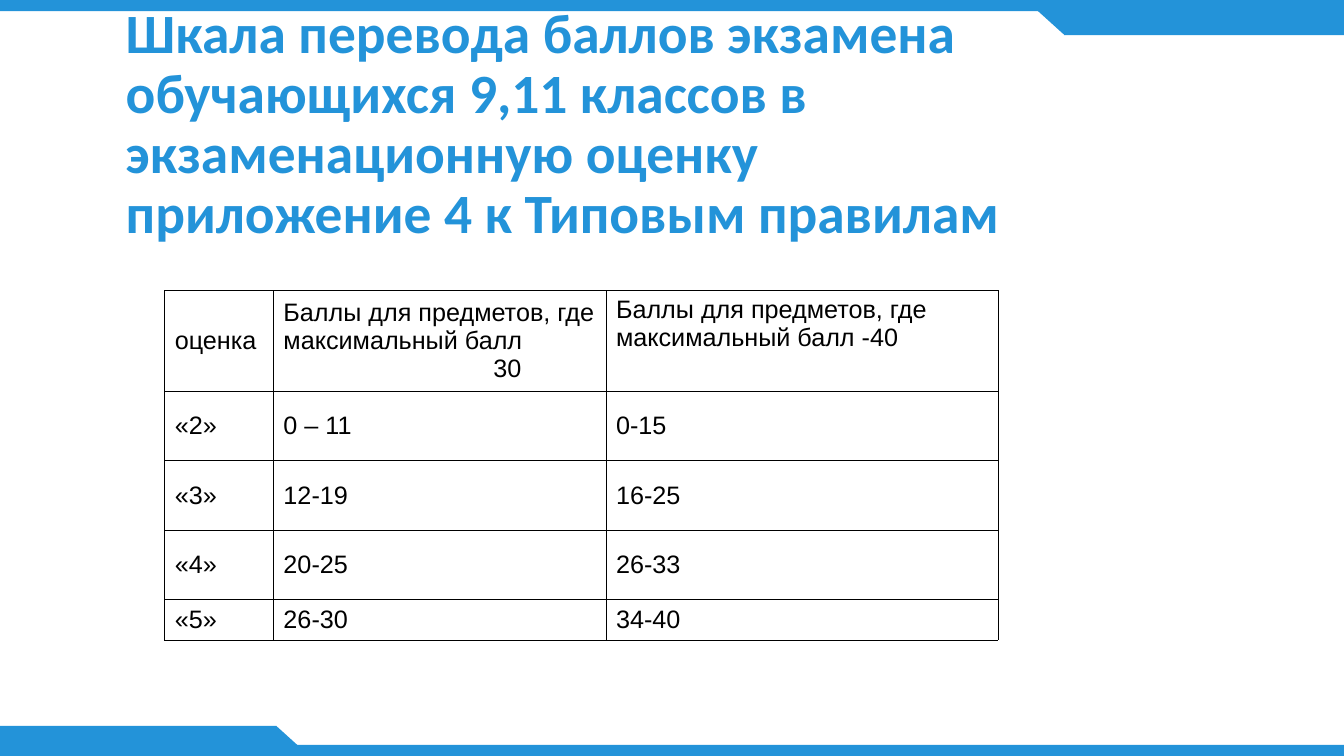
from dataclasses import dataclass

from lxml.etree import SubElement
from pptx import Presentation
from pptx.dml.color import RGBColor
from pptx.enum.shapes import MSO_SHAPE
from pptx.enum.text import MSO_ANCHOR
from pptx.oxml.ns import qn
from pptx.slide import Slide
from pptx.table import _Cell
from pptx.util import Cm, Pt


@dataclass(frozen=True)
class Theme:
    blue: RGBColor = RGBColor(0x23, 0x93, 0xD9)
    black: RGBColor = RGBColor(0, 0, 0)
    title_font: str = "Calibri"
    table_font: str = "Arial"
    title_size: float = 39.6
    table_size: float = 18
    border: float = 0.5


@dataclass(frozen=True)
class Ornament:
    kind: MSO_SHAPE
    left: float
    top: float
    width: float
    height: float
    rotation: float = 0


THEME = Theme()
SLIDE_W, SLIDE_H = 33.87, 19.05
BAR_H, TAB_W, TAB_H, SLANT_W = 0.28, 7.06, 0.76, 1.68

ORNAMENTS = [
    Ornament(MSO_SHAPE.RECTANGLE, 0, 0, SLIDE_W, BAR_H),
    Ornament(MSO_SHAPE.RECTANGLE, 0, SLIDE_H - BAR_H, SLIDE_W, BAR_H),
    Ornament(MSO_SHAPE.RECTANGLE, SLIDE_W - TAB_W, 0.13, TAB_W, TAB_H),
    Ornament(MSO_SHAPE.FLOWCHART_MERGE, 25.96, 0.1, SLANT_W, TAB_H),
    Ornament(MSO_SHAPE.RECTANGLE, -0.1, SLIDE_H - TAB_H, TAB_W, TAB_H),
    Ornament(MSO_SHAPE.FLOWCHART_MERGE, 6.12, SLIDE_H - TAB_H, SLANT_W, TAB_H, 180),
]

TITLE = [
    "Шкала перевода баллов экзамена обучающихся 9,11 классов в экзаменационную оценку",
    "приложение 4 к Типовым правилам",
]

COL_WIDTHS = [2.74, 8.38, 9.88]
ROW_HEIGHTS = [2.39, 1.75, 1.75, 1.75, 0.99]
MAX_SCORE_INDENT = 5.29
GRADES = [
    ["оценка", "Баллы для предметов, где максимальный балл\n30",
     "Баллы для предметов, где максимальный балл -40"],
    ["«2»", "0 – 11", "0-15"],
    ["«3»", "12-19", "16-25"],
    ["«4»", "20-25", "26-33"],
    ["«5»", "26-30", "34-40"],
]


def add_ornament(slide: Slide, o: Ornament) -> None:
    sp = slide.shapes.add_shape(o.kind, Cm(o.left), Cm(o.top), Cm(o.width), Cm(o.height))
    sp.rotation = o.rotation
    sp.shadow.inherit = False
    sp.fill.solid()
    sp.fill.fore_color.rgb = THEME.blue
    sp.line.fill.background()


def add_title(slide: Slide) -> None:
    tf = slide.shapes.add_textbox(Cm(2.92), Cm(0.16), Cm(28.8), Cm(6)).text_frame
    tf.word_wrap = True
    tf.vertical_anchor = MSO_ANCHOR.MIDDLE
    tf.margin_top = tf.margin_bottom = 0
    tf.text = "\n".join(TITLE)
    for p in tf.paragraphs:
        p.line_spacing = 0.9
        p.font.name = THEME.title_font
        p.font.size = Pt(THEME.title_size)
        p.font.bold = True
        p.font.color.rgb = THEME.blue


def set_borders(cell: _Cell) -> None:
    tc_pr = cell._tc.get_or_add_tcPr()
    for i, side in enumerate(("a:lnL", "a:lnR", "a:lnT", "a:lnB")):
        ln = SubElement(tc_pr, qn(side), w=str(Pt(THEME.border)))
        fill = SubElement(ln, qn("a:solidFill"))
        SubElement(fill, qn("a:srgbClr"), val=str(THEME.black))
        tc_pr.insert(i, ln)


def fill_cell(cell: _Cell, text: str) -> None:
    cell.fill.background()
    set_borders(cell)
    cell.vertical_anchor = MSO_ANCHOR.MIDDLE
    cell.text = text
    for p in cell.text_frame.paragraphs:
        p.font.name = THEME.table_font
        p.font.size = Pt(THEME.table_size)
        p.font.bold = False
        p.font.color.rgb = THEME.black


def add_grades(slide: Slide) -> None:
    table = slide.shapes.add_table(
        len(GRADES), len(COL_WIDTHS), Cm(4.15), Cm(7.32),
        Cm(sum(COL_WIDTHS)), Cm(sum(ROW_HEIGHTS))).table
    table.first_row = table.horz_banding = False
    for col, width in zip(table.columns, COL_WIDTHS):
        col.width = Cm(width)
    for row, height, texts in zip(table.rows, ROW_HEIGHTS, GRADES):
        row.height = Cm(height)
        for cell, text in zip(row.cells, texts):
            fill_cell(cell, text)

    # Header: the maximum score is set in, the last heading sits at the top
    max_score = table.cell(0, 1).text_frame.paragraphs[1]
    max_score._p.get_or_add_pPr().set("marL", str(Cm(MAX_SCORE_INDENT)))
    table.cell(0, 2).vertical_anchor = MSO_ANCHOR.TOP


def main() -> None:
    prs = Presentation()
    prs.slide_width, prs.slide_height = Cm(SLIDE_W), Cm(SLIDE_H)
    slide = prs.slides.add_slide(prs.slide_layouts[6])

    # Blue bars and corner tabs
    for ornament in ORNAMENTS:
        add_ornament(slide, ornament)

    # Heading and grade scale
    add_title(slide)
    add_grades(slide)
    prs.save("out.pptx")


if __name__ == "__main__":
    main()
